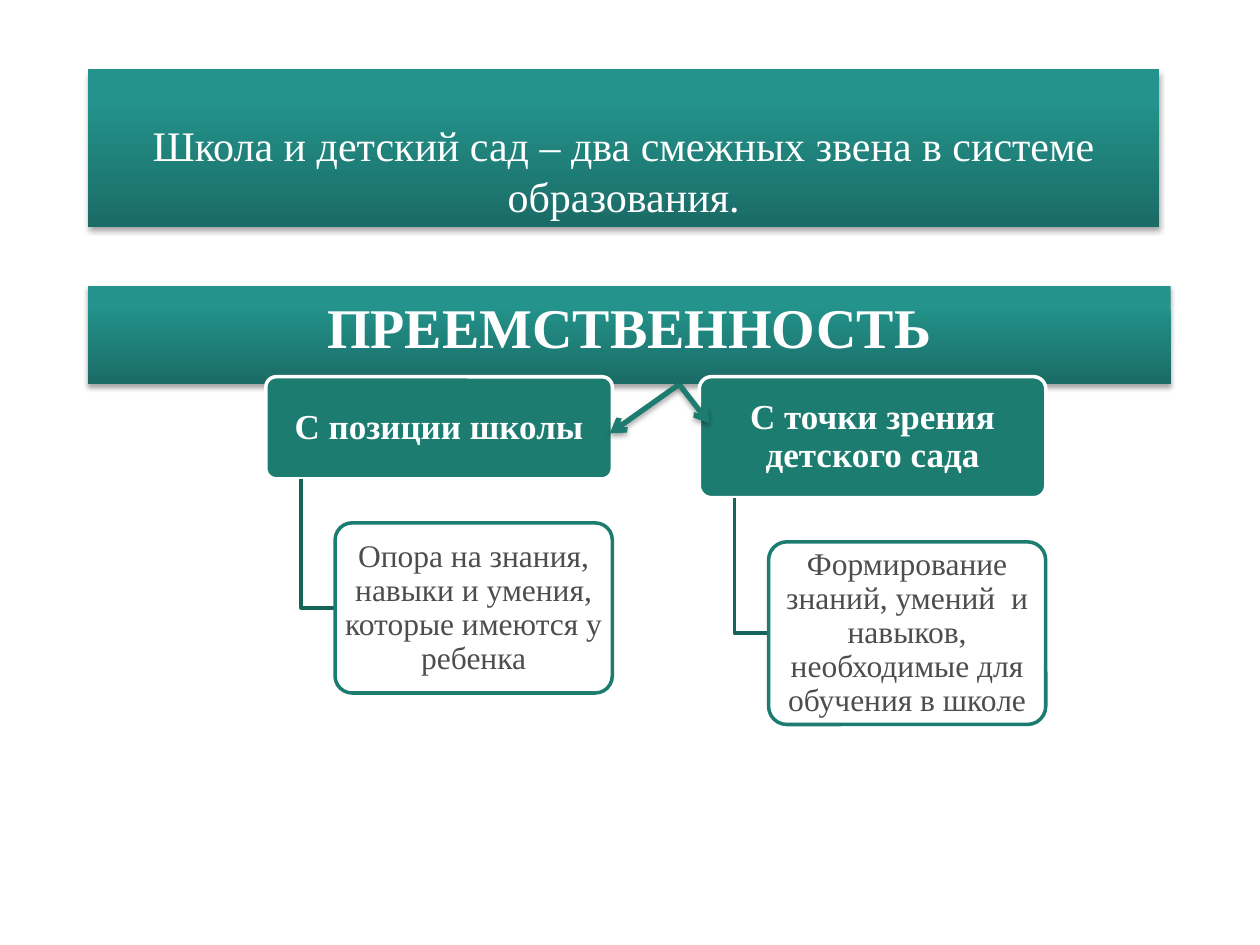
import pptx
import pptx.util
import pptx.dml.color
import pptx.enum.shapes
import pptx.enum.text
import pptx.oxml
import pptx.oxml.ns
from dataclasses import dataclass

Inches = pptx.util.Inches
Pt = pptx.util.Pt
RGB = pptx.dml.color.RGBColor.from_string
SHAPE = pptx.enum.shapes.MSO_SHAPE
ALIGN = pptx.enum.text.PP_ALIGN
ANCHOR = pptx.enum.text.MSO_ANCHOR


@dataclass
class Theme:
    font: str = "Times New Roman"
    teal: str = "1C7C70"
    dark_teal: str = "16635A"
    gradient: tuple = ("23938B", "1B6B66")
    white: str = "FFFFFF"
    gray: str = "4D4D4D"
    title_size: int = 32
    banner_size: int = 24
    heading_size: int = 20
    detail_size: int = 18


theme = Theme()

TITLE = "ПРЕЕМСТВЕННОСТЬ"
BANNER = "Школа и детский сад – два смежных звена в системе образования."
BRANCHES = [
    {"left": 2.11, "heading": "С позиции школы", "heading_height": 0.81,
     "detail": "Опора на знания, навыки и умения, которые имеются у ребенка",
     "detail_height": 1.35},
    {"left": 5.55, "heading": "С точки зрения детского сада", "heading_height": 0.96,
     "detail": "Формирование знаний, умений  и навыков, необходимые для обучения в школе",
     "detail_height": 1.45},
]
BRANCH_TOP, HEADING_WIDTH, DETAIL_WIDTH = 2.99, 2.75, 2.2
TRUNK_INDENT, DETAIL_GAP = 0.28, 0.35
ARROW_START = (5.39, 3.05)
ARROW_ENDS = [(4.84, 3.44), (5.63, 3.36)]


def add_xml(parent, body):
    namespace = pptx.oxml.ns.nsdecls("a")
    tag, rest = body[1:].split(">", 1)
    parent.append(pptx.oxml.parse_xml(f"<{tag} {namespace}>{rest}"))


def add_shadow(shape):
    add_xml(shape._element.spPr,
            '<a:effectLst><a:outerShdw blurRad="39370" dist="22860" dir="5400000" rotWithShape="0">'
            '<a:srgbClr val="000000"><a:alpha val="35000"/></a:srgbClr>'
            '</a:outerShdw></a:effectLst>')


def write(shape, text, size, color, bold=False, anchor=ANCHOR.MIDDLE, spacing=None):
    frame = shape.text_frame
    frame.text = text
    frame.word_wrap = True
    frame.auto_size = pptx.enum.text.MSO_AUTO_SIZE.NONE
    frame.vertical_anchor = anchor
    paragraph = frame.paragraphs[0]
    paragraph.alignment = ALIGN.CENTER
    if spacing:
        paragraph.line_spacing = spacing
    font = paragraph.runs[0].font
    font.name, font.size, font.bold = theme.font, Pt(size), bold
    font.color.rgb = RGB(color)


def style_band(shape):
    shape.fill.gradient()
    shape.fill.gradient_angle = 270
    stops = shape.fill.gradient_stops
    for stop, color, position in zip(stops, theme.gradient, (0.2, 1)):
        stop.color.rgb = RGB(color)
        stop.position = position
    shape.line.fill.background()
    add_shadow(shape)


def add_card(slide, left, top, width, height, fill, line):
    card = slide.shapes.add_shape(SHAPE.ROUNDED_RECTANGLE, Inches(left), Inches(top),
                                  Inches(width), Inches(height))
    card.adjustments[0] = 0.1
    card.shadow.inherit = False
    card.fill.solid()
    card.fill.fore_color.rgb = RGB(fill)
    card.line.color.rgb = RGB(line)
    card.line.width = Pt(2)
    frame = card.text_frame
    frame.margin_left = frame.margin_right = Inches(0.04)
    frame.margin_top = frame.margin_bottom = Inches(0.03)
    return card


def add_branch(slide, branch):
    left = branch["left"]
    bottom = BRANCH_TOP + branch["heading_height"]
    detail_left = left + HEADING_WIDTH - DETAIL_WIDTH
    detail_top = bottom + DETAIL_GAP
    trunk = left + TRUNK_INDENT
    middle = detail_top + branch["detail_height"] / 2

    heading = add_card(slide, left, BRANCH_TOP, HEADING_WIDTH, branch["heading_height"],
                       theme.teal, theme.white)
    write(heading, branch["heading"], theme.heading_size, theme.white, True, spacing=0.9)

    builder = slide.shapes.build_freeform(Inches(trunk), Inches(bottom))
    builder.add_line_segments([(Inches(trunk), Inches(middle)),
                               (Inches(detail_left), Inches(middle))], close=False)
    elbow = builder.convert_to_shape()
    elbow.shadow.inherit = False
    elbow.fill.background()
    elbow.line.color.rgb = RGB(theme.dark_teal)
    elbow.line.width = Pt(2)

    detail = add_card(slide, detail_left, detail_top, DETAIL_WIDTH, branch["detail_height"],
                      theme.white, theme.teal)
    color = detail.fill._xPr.find(".//" + pptx.oxml.ns.qn("a:srgbClr"))
    add_xml(color, '<a:alpha val="90000"></a:alpha>'.replace(' val="90000">', ' val="90000">'))
    write(detail, branch["detail"], theme.detail_size, theme.gray, spacing=0.9)


def add_arrow(slide, start, end):
    points = [Inches(value) for value in (*start, *end)]
    arrow = slide.shapes.add_connector(pptx.enum.shapes.MSO_CONNECTOR.STRAIGHT, *points)
    arrow.line.color.rgb = RGB(theme.teal)
    arrow.line.width = Pt(3)
    add_xml(arrow.line._get_or_add_ln(), '<a:tailEnd type="arrow"></a:tailEnd>')
    add_shadow(arrow)


def main():
    presentation = pptx.Presentation()
    presentation.slide_width, presentation.slide_height = Inches(10), Inches(7.5)
    slide = presentation.slides.add_slide(presentation.slide_layouts[5])

    title = slide.shapes.title
    title.left, title.top = Inches(0.7), Inches(2.27)
    title.width, title.height = Inches(8.59), Inches(0.78)
    style_band(title)
    write(title, TITLE, theme.title_size, theme.white, True, ANCHOR.TOP)

    banner = slide.shapes.add_shape(SHAPE.RECTANGLE, Inches(0.7), Inches(0.55),
                                    Inches(8.5), Inches(1.25))
    style_band(banner)
    write(banner, BANNER, theme.banner_size, theme.white, anchor=ANCHOR.BOTTOM)

    for branch in BRANCHES:
        add_branch(slide, branch)
    for end in ARROW_ENDS:
        add_arrow(slide, ARROW_START, end)

    presentation.save("out.pptx")


if __name__ == "__main__":
    main()
